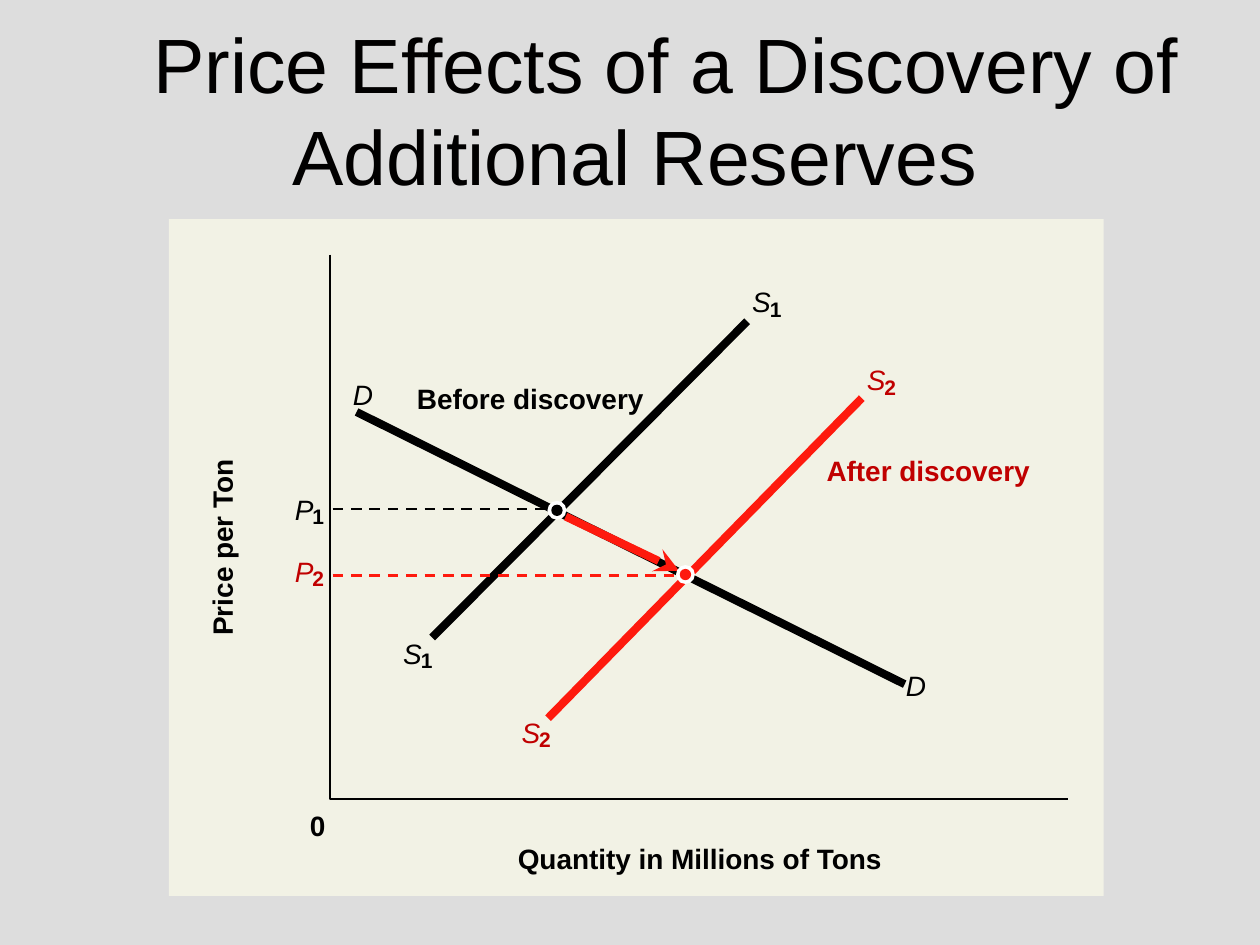
from pptx import Presentation
from pptx.dml.color import RGBColor
from pptx.enum.dml import MSO_LINE
from pptx.enum.shapes import MSO_CONNECTOR, MSO_SHAPE
from pptx.enum.text import MSO_ANCHOR, MSO_AUTO_SIZE, PP_ALIGN
from pptx.oxml.ns import qn
from pptx.util import Inches, Pt
from lxml.etree import SubElement

COLORS = {"page": "DDDDDD", "panel": "F2F2E5", "title": "010000", "black": "000000",
          "white": "FFFFFF", "red": "FE1A0E", "dark red": "C00000"}
FONT = "Arial"
TITLE = "Price Effects of a Discovery of Additional Reserves"

AXES = [(2.62, 2.02), (2.62, 6.34), (8.48, 6.34)]

# text, left, top, width, color, rotation
CAPTIONS = [
    ("0", 2.46, 6.42, 0.19, "black", 0),
    ("After discovery", 6.56, 3.6, 1.68, "dark red", 0),
    ("Before discovery", 3.31, 3.03, 1.86, "black", 0),
    ("Price per Ton", 1.02, 4.17, 1.48, "black", 270),
    ("Quantity in Millions of Tons", 4.11, 6.68, 2.98, "black", 0),
]
# start, end, color
CURVES = [
    ((3.43, 5.06), (5.93, 2.55), "black"),
    ((4.35, 5.7), (6.84, 3.16), "red"),
    ((7.18, 5.43), (2.83, 3.27), "black"),
]
# letter, subscript, left, top, color
SYMBOLS = [
    ("S", "1", 3.2, 5.05, "black"), ("S", "1", 5.97, 2.26, "black"),
    ("P", "2", 2.34, 4.4, "dark red"), ("P", "1", 2.34, 3.91, "black"),
    ("S", "2", 4.14, 5.68, "dark red"), ("S", "2", 6.88, 2.88, "dark red"),
    ("D", "", 2.8, 3, "black"), ("D", "", 7.19, 5.31, "black"),
]
PRICE_SHIFT = ((4.49, 4.1), (5.39, 4.53))
# equilibrium center, guide height, guide end, color
EQUILIBRIA = [((5.44, 4.56), 4.57, 5.41, "red"), ((4.42, 4.05), 4.04, 4.43, "black")]
GUIDE_START = 2.64


def rgb(name):
    return RGBColor.from_string(COLORS[name])


def style(span, size, color, bold=None, italic=None):
    span.font.name, span.font.size = FONT, Pt(size)
    span.font.bold, span.font.italic = bold, italic
    span.font.color.rgb = rgb(color)


def add_label(page, text, left, top, width, height, size, color, rotation=0, **emphasis):
    box = page.shapes.add_textbox(Inches(left), Inches(top), Inches(width), Inches(height))
    box.rotation = rotation
    frame = box.text_frame
    frame.margin_left = frame.margin_right = frame.margin_top = frame.margin_bottom = 0
    frame.word_wrap = False
    frame.auto_size = MSO_AUTO_SIZE.SHAPE_TO_FIT_TEXT
    frame.text = text
    style(frame.paragraphs[0].runs[0], size, color, **emphasis)


def add_line(page, start, end, color, width):
    line = page.shapes.add_connector(MSO_CONNECTOR.STRAIGHT, *map(Inches, start + end))
    line.line.color.rgb = rgb(color)
    line.line.width = Pt(width)
    SubElement(line._element.spPr, qn("a:effectLst"))
    return line


def add_filled(page, kind, left, top, width, height, color):
    shape = page.shapes.add_shape(kind, *map(Inches, (left, top, width, height)))
    shape.shadow.inherit = False
    shape.fill.solid()
    shape.fill.fore_color.rgb = rgb(color)
    shape.line.fill.background()


def add_dot(page, center, size, color):
    x, y = center
    add_filled(page, MSO_SHAPE.OVAL, x - size / 2, y - size / 2, size, size, color)


def add_title(page):
    title = page.shapes.title
    title.left, title.top, title.width, title.height = map(Inches, (0.25, 0.24, 9.58, 1.25))
    frame = title.text_frame
    frame.text = TITLE
    frame.vertical_anchor = MSO_ANCHOR.MIDDLE
    paragraph = frame.paragraphs[0]
    paragraph.alignment = PP_ALIGN.CENTER
    properties = paragraph._p.get_or_add_pPr()
    properties.set("marL", "0")
    properties.set("indent", str(Inches(0.5)))
    style(paragraph.runs[0], 44, "title")


def add_axes(page):
    points = [(Inches(x), Inches(y)) for x, y in AXES]
    builder = page.shapes.build_freeform(*points[0])
    builder.add_line_segments(points[1:], close=False)
    axes = builder.convert_to_shape()
    axes.shadow.inherit = False
    axes.fill.background()
    axes.line.color.rgb = rgb("black")
    axes.line.width = Pt(1.5)


def main():
    deck = Presentation()
    deck.slide_width, deck.slide_height = Inches(10), Inches(7.5)
    page = deck.slides.add_slide(deck.slide_layouts[5])
    page.background.fill.solid()
    page.background.fill.fore_color.rgb = rgb("page")

    # Title, panel and axes
    add_title(page)
    add_filled(page, MSO_SHAPE.RECTANGLE, 1.34, 1.74, 7.42, 5.37, "panel")
    add_axes(page)

    # Captions
    for text, left, top, width, color, rotation in CAPTIONS:
        add_label(page, text, left, top, width, 0.27, 16, color, rotation, bold=True)

    # Supply and demand curves with their symbols
    for start, end, color in CURVES:
        add_line(page, start, end, color, 4.63)
    for letter, subscript, left, top, color in SYMBOLS:
        width = 0.15 if subscript else 0.22
        add_label(page, letter, left, top, width, 0.27, 16, color, italic=True)
        if subscript:
            add_label(page, subscript, left + 0.14, top + 0.09, 0.14, 0.2, 12, color, bold=True)

    # Arrow from the old price to the new one
    arrow = add_line(page, *PRICE_SHIFT, "red", 4.63)
    SubElement(arrow.line._get_or_add_ln(), qn("a:tailEnd"), type="stealth")

    # Price guides and equilibrium dots
    for center, height, end, color in EQUILIBRIA:
        guide = add_line(page, (GUIDE_START, height), (end, height), color, 1.5)
        guide.line.dash_style = MSO_LINE.DASH
        add_dot(page, center, 0.15, "white")
        add_dot(page, center, 0.09, color)

    deck.save("out.pptx")


if __name__ == "__main__":
    main()
